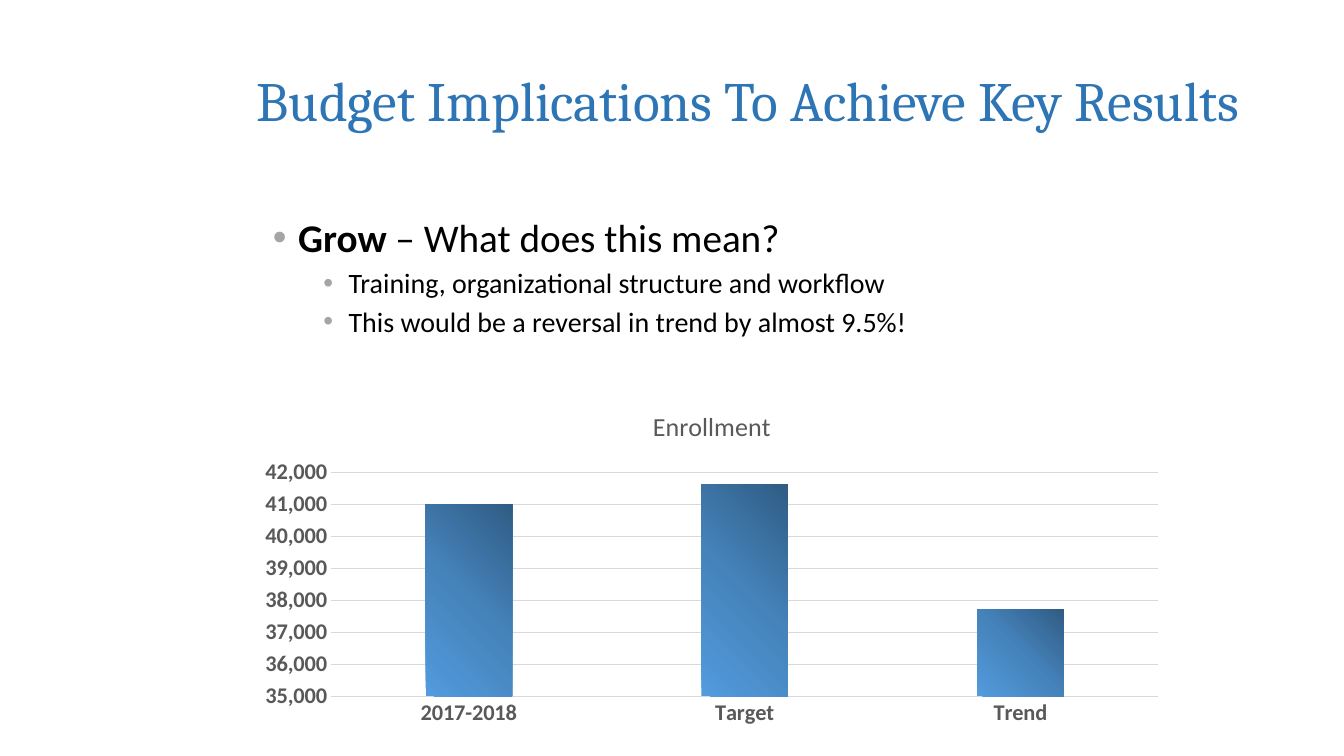
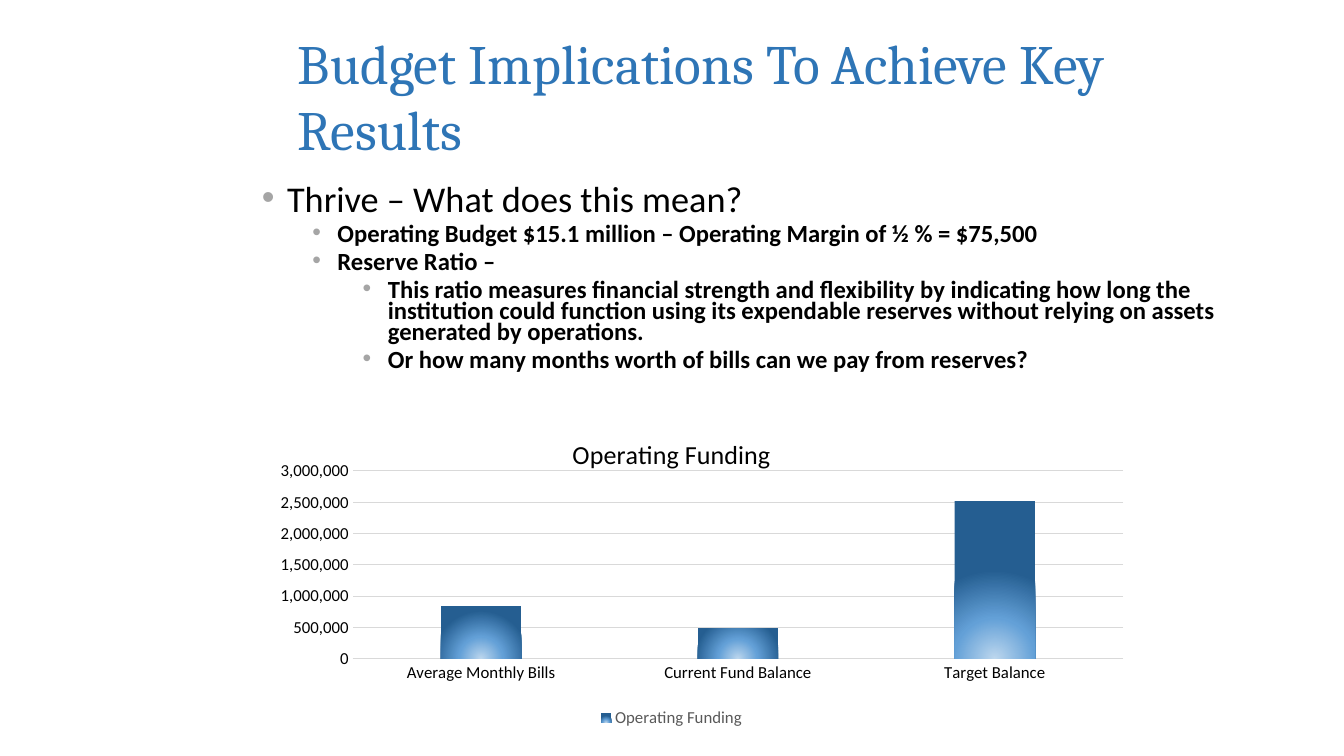
from pptx import Presentation
from pptx.chart.data import CategoryChartData
from pptx.dml.color import RGBColor
from pptx.enum.chart import XL_CHART_TYPE, XL_LEGEND_POSITION, XL_TICK_MARK
from pptx.enum.text import MSO_ANCHOR
from pptx.oxml import parse_xml
from pptx.oxml.ns import nsdecls, qn
from pptx.util import Cm, Pt

COLUMNS = XL_CHART_TYPE.COLUMN_CLUSTERED
LEGEND_BOTTOM = XL_LEGEND_POSITION.BOTTOM
NO_TICKS = XL_TICK_MARK.NONE
MIDDLE = MSO_ANCHOR.MIDDLE

COLORS = {
    "title": "2E75B6",
    "text": "000000",
    "bullet": "A5A5A5",
    "muted": "595959",
    "grid": "D9D9D9",
}
TITLE = "Budget Implications To Achieve Key Results"
TITLE_FONT, BODY_FONT = "Cambria", "Calibri"
TITLE_SIZE, CHART_TITLE_SIZE = 39.6, 18.6
INDENT_STEP, HANGING = 1.27, 0.635
SPACE_RATIO = 0.3  # space before a bullet, as a share of its text size

# Each box is left, top, width, height in centimetres.
# Each bullet is a level and its runs; each run is a text and whether it is bold.
# Each gradient pairs a stop in percent with a colour; the focus is the
# left, top, right and bottom inset, in percent, of the point it spreads from.
SLIDES = [
    {
        "title_box": (6.22, 1.04, 25.83, 2.92),
        "body_box": (6.63, 5.38, 23.27, 3.94),
        "chart_box": (6.22, 9.86, 23.44, 8.64),
        "sizes": (28, 20),
        "line_spacing": 0.9,
        "bullets": [
            (0, [("Grow", True), (" – What does this mean?", False)]),
            (1, [("Training, organizational structure and workflow", False)]),
            (1, [("This would be a reversal in trend by almost 9.5%!", False)]),
        ],
        "chart": {
            "name": "Enrollment",
            "values": {"2017-2018": 41000, "Target": 41600, "Trend": 37700},
            "scale": (35000, 42000, 1000),
            "title_color": "muted",
            "axis_font": (16, "muted", True),
            "gradient": [(0, "305C84"), (50, "4583BB"), (100, "529BDE")],
            "focus": (100, 0, 0, 100),
            "plot": None,
            "legend": False,
        },
    },
    {
        "title_box": (7.26, 0.66, 24.64, 3.48),
        "body_box": (6.35, 4.62, 24.97, 5.51),
        "chart_box": (5.54, 10.59, 22.78, 7.85),
        "sizes": (25.9, 17.6, 17.6),
        "line_spacing": 0.7,
        "bullets": [
            (0, [("Thrive – What does this mean?", False)]),
            (1, [("Operating Budget $15.1 million – Operating Margin of ½ % = $75,500", True)]),
            (1, [("Reserve Ratio –", True)]),
            (2, [("This ratio measures financial strength and flexibility by "
                  "indicating how long the institution could function using its "
                  "expendable reserves without relying on assets generated by "
                  "operations.", True)]),
            (2, [("Or how many months worth of bills can we pay from reserves?", True)]),
        ],
        "chart": {
            "name": "Operating Funding",
            "values": {
                "Average Monthly Bills": 840000,
                "Current Fund Balance": 490000,
                "Target Balance": 2520000,
            },
            "scale": (0, 3000000, 500000),
            "title_color": "text",
            "axis_font": (12, "text", False),
            "gradient": [(0, "BDD7EE"), (46, "63A0D7"), (100, "255E91")],
            "focus": (50, 130, 50, -30),
            "plot": {"x": 0.147, "y": 0.163, "w": 0.853, "h": 0.603},
            "legend": True,
        },
    },
]


def style_font(font, size, color, bold=False, name=BODY_FONT):
    font.name = name
    font.size = Pt(size)
    font.bold = bold
    font.color.rgb = RGBColor.from_string(COLORS[color])


def add_run(paragraph, text, *style, **options):
    run = paragraph.add_run()
    run.text = text
    style_font(run.font, *style, **options)


def add_text_frame(slide, box):
    frame = slide.shapes.add_textbox(*map(Cm, box)).text_frame
    frame.word_wrap = True
    return frame


def add_title(slide, box):
    frame = add_text_frame(slide, box)
    frame.vertical_anchor = MIDDLE
    add_run(frame.paragraphs[0], TITLE, TITLE_SIZE, "title", name=TITLE_FONT)


def set_bullet(paragraph, level):
    properties = paragraph._p.get_or_add_pPr()
    properties.set("marL", str(Cm(HANGING + level * INDENT_STEP)))
    properties.set("indent", str(-Cm(HANGING)))
    for xml in (
        f'<a:buClr {nsdecls("a")}><a:srgbClr val="{COLORS["bullet"]}"/></a:buClr>',
        f'<a:buFont {nsdecls("a")} typeface="Arial"/>',
        f'<a:buChar {nsdecls("a")} char="•"/>',
    ):
        properties.append(parse_xml(xml))


def add_bullets(slide, box, bullets, sizes, line_spacing):
    frame = add_text_frame(slide, box)
    for index, (level, runs) in enumerate(bullets):
        paragraph = frame.add_paragraph() if index else frame.paragraphs[0]
        paragraph.level = level
        set_bullet(paragraph, level)
        paragraph.line_spacing = line_spacing
        paragraph.space_before = Pt(round(SPACE_RATIO * sizes[level], 1) if index else 0)
        for text, bold in runs:
            add_run(paragraph, text, sizes[level], "text", bold)


def fill_with_gradient(series, gradient, focus):
    stops = "".join(
        f'<a:gs pos="{position * 1000}"><a:srgbClr val="{color}"/></a:gs>'
        for position, color in gradient
    )
    insets = " ".join(f'{side}="{inset * 1000}"' for side, inset in zip("ltrb", focus))
    series.format.line.fill.background()
    series._element.get_or_add_spPr().insert(0, parse_xml(
        f'<a:gradFill {nsdecls("a")} rotWithShape="1"><a:gsLst>{stops}</a:gsLst>'
        f'<a:path path="circle"><a:fillToRect {insets}/></a:path></a:gradFill>'
    ))


def place_plot(chart, plot):
    """Fix the inner plot area, given as shares of the chart."""
    area = chart._chartSpace.chart.plotArea
    for layout in area.findall(qn("c:layout")):
        area.remove(layout)
    modes = '<c:xMode val="edge"/><c:yMode val="edge"/>'
    shares = "".join(f'<c:{key} val="{share}"/>' for key, share in plot.items())
    area.insert(0, parse_xml(
        f'<c:layout {nsdecls("c")}><c:manualLayout><c:layoutTarget val="inner"/>'
        f'{modes}{shares}</c:manualLayout></c:layout>'
    ))


def draw_line(line):
    line.color.rgb = RGBColor.from_string(COLORS["grid"])
    line.width = Pt(0.75)


def style_axes(chart, scale, axis_font):
    categories, values = chart.category_axis, chart.value_axis
    for axis in (categories, values):
        axis.major_tick_mark = axis.minor_tick_mark = NO_TICKS
        style_font(axis.tick_labels.font, *axis_font)
    draw_line(categories.format.line)
    values.format.line.fill.background()
    values.has_major_gridlines = True
    draw_line(values.major_gridlines.format.line)
    values.minimum_scale, values.maximum_scale, values.major_unit = scale
    values.tick_labels.number_format = "#,##0"
    values.tick_labels.number_format_is_linked = False


def add_column_chart(slide, box, content):
    data = CategoryChartData(number_format="#,##0")
    data.categories = list(content["values"])
    data.add_series(content["name"], list(content["values"].values()))
    chart = slide.shapes.add_chart(COLUMNS, *map(Cm, box), data).chart
    style_font(chart.font, 10, "text")

    chart.has_title = True
    chart.chart_title.include_in_layout = False
    heading = chart.chart_title.text_frame.paragraphs[0]
    add_run(heading, content["name"], CHART_TITLE_SIZE, content["title_color"])

    style_axes(chart, content["scale"], content["axis_font"])
    columns = chart.plots[0]
    columns.vary_by_categories = False
    columns.gap_width, columns.overlap = 219, -27
    fill_with_gradient(columns.series[0], content["gradient"], content["focus"])
    if content["plot"]:
        place_plot(chart, content["plot"])

    chart.has_legend = content["legend"]
    if chart.has_legend:
        chart.legend.position = LEGEND_BOTTOM
        chart.legend.include_in_layout = False
        style_font(chart.legend.font, 12, "muted")


def add_budget_slide(deck, content):
    slide = deck.slides.add_slide(deck.slide_layouts[6])
    add_title(slide, content["title_box"])
    add_bullets(slide, content["body_box"], content["bullets"],
                content["sizes"], content["line_spacing"])
    add_column_chart(slide, content["chart_box"], content["chart"])


def main():
    deck = Presentation()
    deck.slide_width, deck.slide_height = Cm(33.87), Cm(19.05)
    for content in SLIDES:
        add_budget_slide(deck, content)
    deck.save("out.pptx")


if __name__ == "__main__":
    main()
